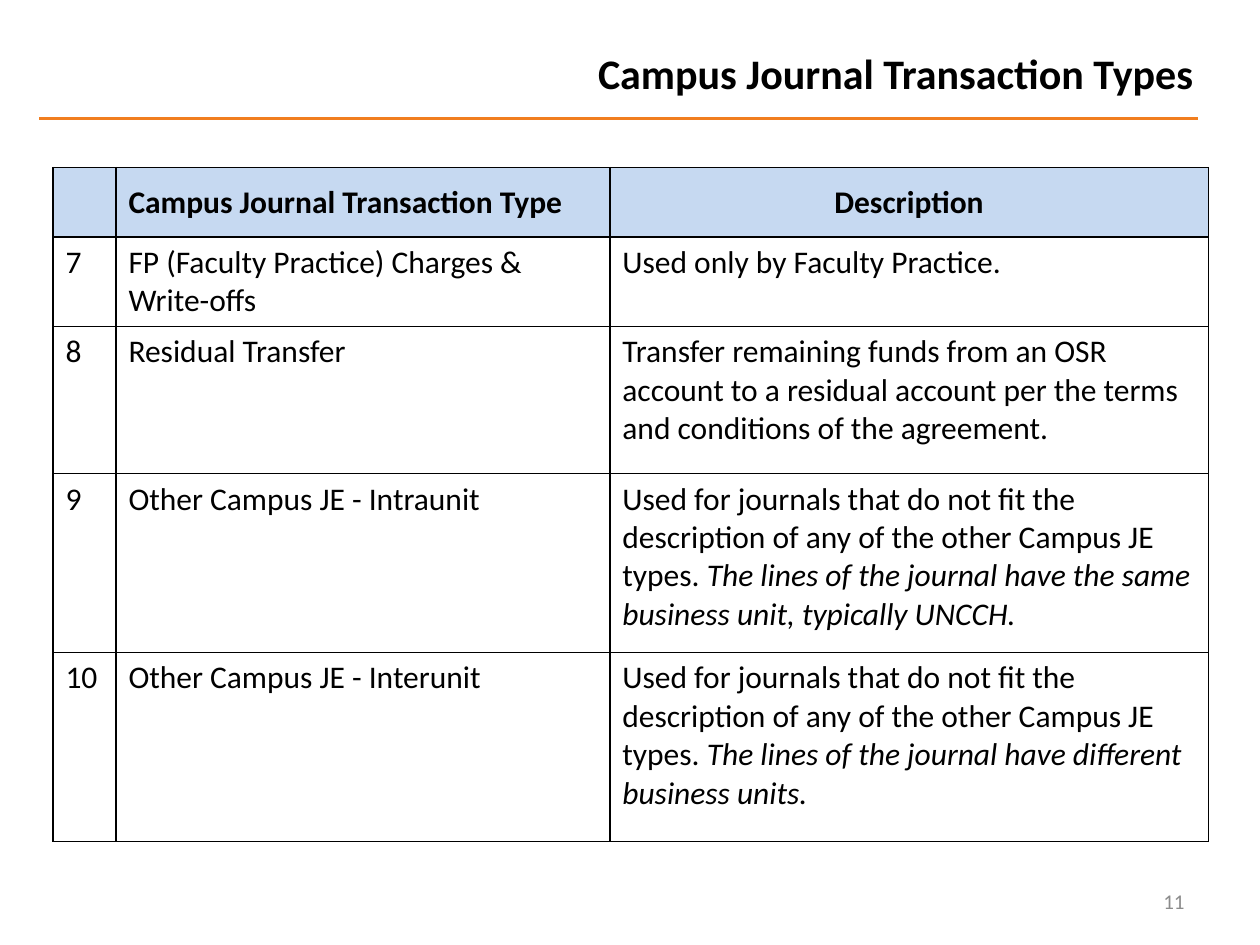
from lxml.etree import SubElement
from pptx import Presentation
from pptx.dml.color import RGBColor
from pptx.enum.shapes import MSO_CONNECTOR
from pptx.enum.text import MSO_ANCHOR, PP_ALIGN
from pptx.oxml.ns import qn
from pptx.util import Inches, Pt

FONT = "Calibri"
BLACK, ORANGE, GREY, HEADER_BLUE = "000000", "F17E1F", "8C8C8C", "C6D9F1"
COLUMN_WIDTHS = [0.5, 3.92, 4.75]
ROW_HEIGHTS = [0.55, 0.71, 1.17, 1.42, 1.5]
OTHER_TYPES = ("Used for journals that do not fit the description of any "
               "of the other Campus JE types. ")

# Each cell is a tuple of text parts; a second part is set in italics
HEADER = [(), ("Campus Journal Transaction Type",), ("Description",)]
BODY = [
    [("7",), ("FP (Faculty Practice) Charges & Write-offs",),
     ("Used only by Faculty Practice.",)],
    [("8",), ("Residual Transfer",),
     ("Transfer remaining funds from an OSR account to a residual account "
      "per the terms and conditions of the agreement.",)],
    [("9",), ("Other Campus JE - Intraunit",),
     (OTHER_TYPES, "The lines of the journal have the same business unit, "
                   "typically UNCCH.")],
    [("10",), ("Other Campus JE - Interunit",),
     (OTHER_TYPES, "The lines of the journal have different business units.")],
]


def color(hex_string):
    return RGBColor.from_string(hex_string)


def write(paragraph, parts, size, hex_color=BLACK, bold=False, align=PP_ALIGN.LEFT):
    for index, text in enumerate(parts):
        run = paragraph.add_run()
        run.text = text
        if index > 0:
            run.font.italic = True
    paragraph.alignment = align
    font = paragraph.font
    font.name, font.size, font.bold = FONT, Pt(size), bold
    font.color.rgb = color(hex_color)


def add_text(slide, box, text, size, anchor=MSO_ANCHOR.TOP, **style):
    frame = slide.shapes.add_textbox(*map(Inches, box)).text_frame
    frame.word_wrap = True
    frame.vertical_anchor = anchor
    write(frame.paragraphs[0], [text], size, align=PP_ALIGN.RIGHT, **style)


def add_rule(slide, left, right, top):
    rule = slide.shapes.add_connector(
        MSO_CONNECTOR.STRAIGHT, *map(Inches, (left, top, right, top)))
    rule.line.color.rgb = color(ORANGE)
    rule.line.width = Pt(2)
    SubElement(rule._element.spPr, qn("a:effectLst"))


def add_borders(cell):
    properties = cell._tc.get_or_add_tcPr()
    for index, side in enumerate(("lnL", "lnR", "lnT", "lnB")):
        line = properties.makeelement(qn(f"a:{side}"), {"w": str(Pt(1))})
        fill = SubElement(line, qn("a:solidFill"))
        SubElement(fill, qn("a:srgbClr"), val=BLACK)
        properties.insert(index, line)  # borders come before the cell fill


def add_transaction_table(slide, left, top):
    rows = [HEADER] + BODY
    table = slide.shapes.add_table(
        len(rows), len(COLUMN_WIDTHS), Inches(left), Inches(top),
        Inches(sum(COLUMN_WIDTHS)), Inches(sum(ROW_HEIGHTS))).table
    for column, width in zip(table.columns, COLUMN_WIDTHS):
        column.width = Inches(width)
    for row, height in zip(table.rows, ROW_HEIGHTS):
        row.height = Inches(height)

    for row_index, contents in enumerate(rows):
        is_header = row_index == 0
        for column_index, parts in enumerate(contents):
            cell = table.cell(row_index, column_index)
            centred = is_header and column_index == 2
            write(cell.text_frame.paragraphs[0], parts, 18, bold=is_header,
                  align=PP_ALIGN.CENTER if centred else PP_ALIGN.LEFT)
            if is_header:
                cell.vertical_anchor = MSO_ANCHOR.MIDDLE
                cell.fill.solid()
                cell.fill.fore_color.rgb = color(HEADER_BLUE)
            else:
                cell.fill.background()
            add_borders(cell)


def main():
    presentation = Presentation()
    presentation.slide_width = Inches(10)
    presentation.slide_height = Inches(7.5)
    slide = presentation.slides.add_slide(presentation.slide_layouts[6])

    # Title with its rule
    add_rule(slide, 0.31, 9.51, 0.94)
    add_text(slide, (2.08, 0.33, 7.49, 0.58),
             "Campus Journal Transaction Types", 24, bold=True)

    # Transaction types
    add_transaction_table(slide, 0.42, 1.33)

    # Slide number
    add_text(slide, (7.17, 6.95, 2.33, 0.4), "11", 12,
             anchor=MSO_ANCHOR.MIDDLE, hex_color=GREY)

    presentation.save("out.pptx")


if __name__ == "__main__":
    main()
